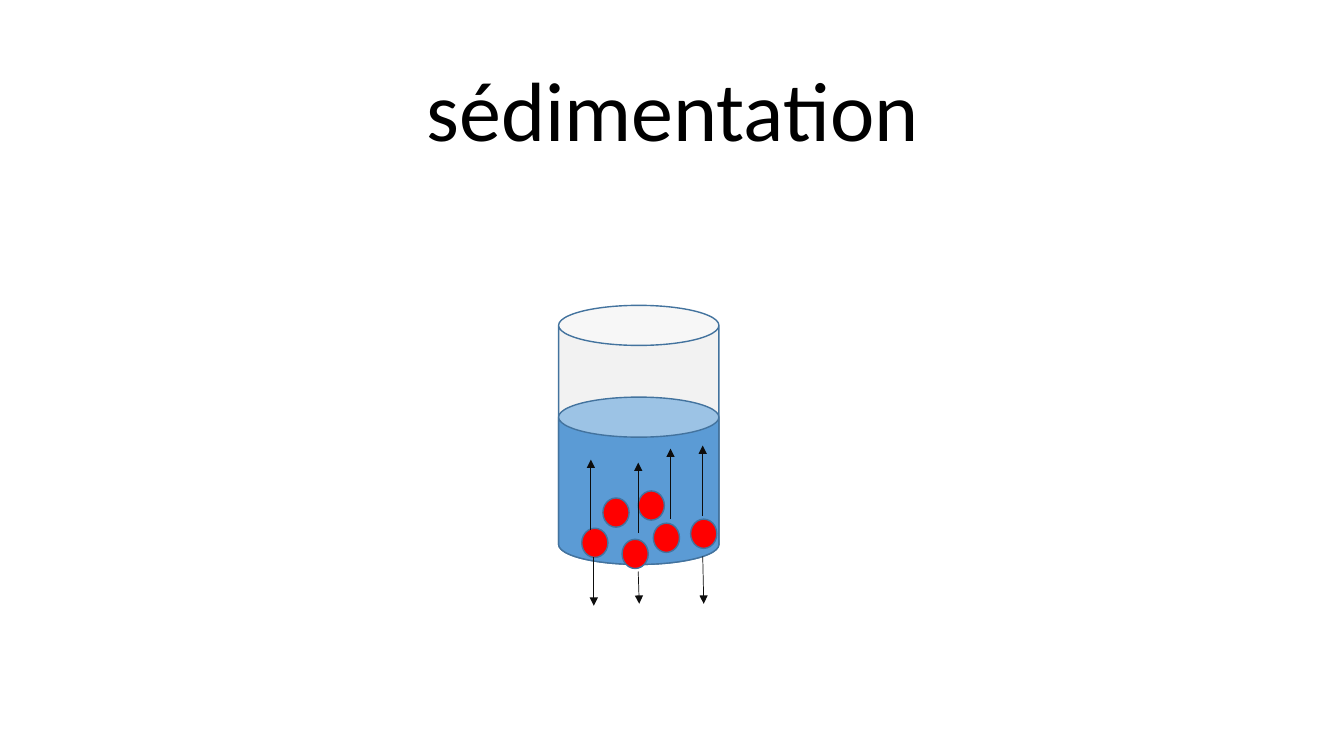
from typing import NamedTuple

from lxml.etree import SubElement
from pptx import Presentation
from pptx.dml.color import RGBColor
from pptx.enum.shapes import MSO_CONNECTOR, MSO_SHAPE
from pptx.enum.text import MSO_ANCHOR, MSO_AUTO_SIZE, PP_ALIGN
from pptx.oxml.ns import qn
from pptx.util import Inches, Pt

OUTLINE = "43739E"
ARROW_COLOUR = "0D0D0D"
PARTICLE_COLOUR = "FF0000"
PARTICLE_WIDTH, PARTICLE_HEIGHT = 0.26, 0.29
BEAKER_LEFT, BEAKER_WIDTH, BEAKER_BOTTOM = 5.54, 1.59, 5.6
RISE = 0.7


class Cylinder(NamedTuple):
    top: float
    fill: str


class Point(NamedTuple):
    x: float
    y: float


class Arrow(NamedTuple):
    start: Point
    end: Point


GLASS_AND_WATER = [Cylinder(3.03, "F2F2F2"), Cylinder(3.94, "5B9BD5")]
PARTICLES = [
    Point(5.77, 5.24), Point(6.17, 5.35), Point(6.48, 5.19),
    Point(5.98, 4.94), Point(6.33, 4.87), Point(6.85, 5.15),
]
RISING_STARTS = [Point(6.97, 5.12), Point(5.86, 5.26), Point(6.33, 5.29), Point(6.65, 5.15)]
FALLING_ARROWS = [
    Arrow(Point(6.33, 5.67), Point(6.34, 5.99)),
    Arrow(Point(6.97, 5.52), Point(6.98, 5.99)),
    Arrow(Point(5.89, 5.53), Point(5.89, 6.01)),
]


def colour(code: str) -> RGBColor:
    return RGBColor.from_string(code)


def write_text(box, text: str, *, size: float, font: str, fill: str,
               align: PP_ALIGN, anchor: MSO_ANCHOR, line_spacing: float) -> None:
    frame = box.text_frame
    frame.word_wrap = True
    frame.auto_size = MSO_AUTO_SIZE.NONE
    frame.vertical_anchor = anchor
    para = frame.paragraphs[0]
    para.alignment = align
    para.line_spacing = line_spacing
    span = para.add_run()
    span.text = text
    span.font.size = Pt(size)
    span.font.name = font
    span.font.color.rgb = colour(fill)


def place(box, left: float, top: float, width: float, height: float) -> None:
    box.left, box.top = Inches(left), Inches(top)
    box.width, box.height = Inches(width), Inches(height)


def draw_shape(page, kind: MSO_SHAPE, left: float, top: float,
               width: float, height: float, fill: str) -> None:
    shape = page.shapes.add_shape(kind, Inches(left), Inches(top), Inches(width), Inches(height))
    shape.shadow.inherit = False
    shape.fill.solid()
    shape.fill.fore_color.rgb = colour(fill)
    shape.line.color.rgb = colour(OUTLINE)
    shape.line.width = Pt(1)


def draw_arrow(page, arrow: Arrow) -> None:
    ends = [Inches(value) for point in arrow for value in point]
    connector = page.shapes.add_connector(MSO_CONNECTOR.STRAIGHT, *ends)
    connector.line.color.rgb = colour(ARROW_COLOUR)
    connector.line.width = Pt(0.5)
    SubElement(connector.line._get_or_add_ln(), qn("a:tailEnd"), type="triangle")
    SubElement(connector._element.spPr, qn("a:effectLst"))


def main() -> None:
    deck = Presentation()
    deck.slide_width, deck.slide_height = Inches(13.33), Inches(7.5)
    page = deck.slides.add_slide(deck.slide_layouts[0])

    subtitle = page.placeholders[1].element
    subtitle.getparent().remove(subtitle)
    title = page.shapes.title
    place(title, 1.67, 0.12, 10, 1.51)
    write_text(title, "sédimentation", size=60, font="Calibri", fill="000000",
               align=PP_ALIGN.CENTER, anchor=MSO_ANCHOR.BOTTOM, line_spacing=0.9)

    for cylinder in GLASS_AND_WATER:
        draw_shape(page, MSO_SHAPE.CAN, BEAKER_LEFT, cylinder.top, BEAKER_WIDTH,
                   BEAKER_BOTTOM - cylinder.top, cylinder.fill)
    for particle in PARTICLES:
        draw_shape(page, MSO_SHAPE.FLOWCHART_CONNECTOR, particle.x, particle.y,
                   PARTICLE_WIDTH, PARTICLE_HEIGHT, PARTICLE_COLOUR)

    rising_arrows = [Arrow(start, Point(start.x, start.y - RISE)) for start in RISING_STARTS]
    for arrow in rising_arrows + FALLING_ARROWS:
        draw_arrow(page, arrow)

    deck.save("out.pptx")


if __name__ == "__main__":
    main()
